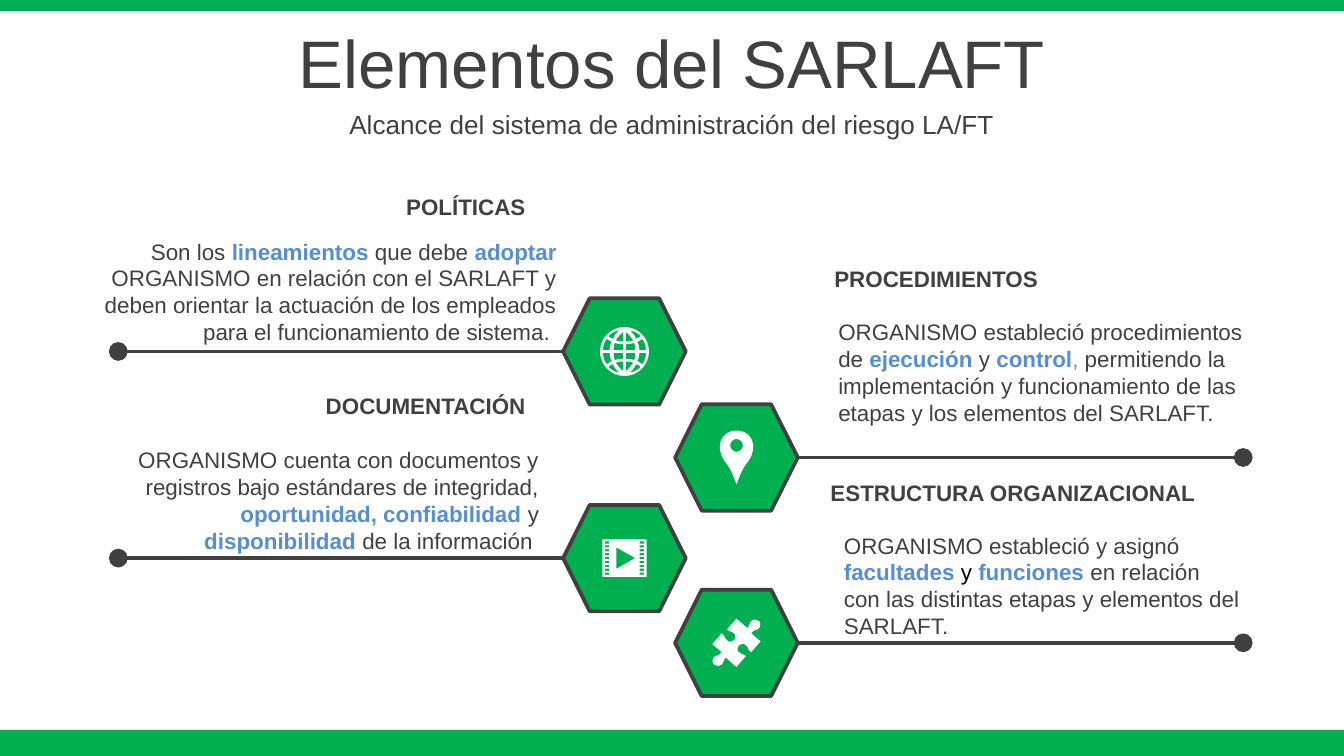
from lxml import etree
from pptx import Presentation, util as u
from pptx.dml.color import RGBColor
from pptx.enum import shapes as kinds, text
from pptx.oxml.ns import qn

Pt = u.Pt
THEME = {
    "font": "Arial", "title": 36, "subtitle": 14, "body": 12, "outline": 2,
    "green": "00B050", "dark": "404040", "blue": "558ED5", "black": "000000", "white": "FFFFFF",
}
# run style: colour, bold
STYLES = {
    "plain": ("dark", False), "strong": ("dark", True), "key": ("blue", True),
    "tint": ("blue", False), "ink": ("black", False),
}
SLIDE_W, SLIDE_H = 720, 405
HEX_W, HEX_H = 65.7, 57
HEX_LEFT = {"left": 301.7, "right": 361.7}
LINE_END = {"left": 63.4, "right": 666}
ICON_UNIT = 0.72

BANDS = [(0, 5.8), (391, 14)]  # top, height
HEADERS = [
    ("Elementos del SARLAFT", "title", 10.1, 45.4),
    ("Alcance del sistema de administración del riesgo LA/FT", "subtitle", 55.4, 22.3),
]
# boxes: left, top, width
ELEMENTS = [
    {"side": "left", "hex_top": 159.8, "icon": "globe",
     "heading": "POLÍTICAS", "heading_box": (84.2, 100.1, 204.5), "body_box": (36.7, 123.8, 268.6),
     "body": [("Son los ", "plain"), ("lineamientos ", "key"), ("que debe ", "plain"),
              ("adoptar ", "key"),
              ("ORGANISMO en relación con el SARLAFT y deben orientar la actuación de los "
               "empleados para el funcionamiento de sistema. ", "plain")]},
    {"side": "right", "hex_top": 216.6, "icon": "pin",
     "heading": "PROCEDIMIENTOS", "heading_box": (439.9, 138.6, 204.5), "body_box": (442, 166.9, 234.7),
     "body": [("ORGANISMO estableció procedimientos de ", "plain"), ("ejecución", "key"),
              (" y ", "plain"), ("control", "key"), (", ", "tint"),
              ("permitiendo la implementación y funcionamiento de las etapas y los "
               "elementos del SARLAFT.", "plain")]},
    {"side": "left", "hex_top": 270.5, "icon": "film",
     "heading": "DOCUMENTACIÓN", "heading_box": (84.2, 206.8, 204.5), "body_box": (48.2, 235.4, 247.7),
     "body": [("ORGANISMO cuenta con documentos y registros bajo estándares de integridad, ", "plain"),
              ("oportunidad, confiabilidad", "key"), (" y ", "plain"),
              ("disponibilidad ", "key"), ("de la información ", "plain")]},
    {"side": "right", "hex_top": 315.9, "icon": "puzzle",
     "heading": "ESTRUCTURA ORGANIZACIONAL", "heading_box": (437.8, 253, 226.8),
     "body_box": (445, 281.3, 227.5),
     "body": [("ORGANISMO estableció y asignó ", "plain"), ("facultades ", "key"), ("y ", "ink"),
              ("funciones ", "key"),
              ("en relación con las distintas etapas y elementos del SARLAFT.", "plain")]},
]

# Icon outlines, measured from the icon centre: pairs are corners, sixes are Bezier curves.
GLOBE_QUARTER = [
    [(1, 14.5), (1, 7.5), (3, 7.5, 5, 7.5, 6.5, 8.5), (5, 10.5, 3, 13, 1, 14.5)],
    [(7, 6.5), (5, 5.5, 3, 5.5, 1, 5.5), (1, 1), (8, 1), (8, 3, 8, 5, 7, 6.5)],
    [(13, 9.5), (12, 8.5, 11, 8, 9.5, 7), (10.5, 5.5, 11, 3, 11, 1), (16, 1),
     (16, 4, 15, 7.5, 13, 9.5)],
    [(4, 15.5), (6, 14, 7.5, 12, 8.5, 9.5), (10, 10, 11, 10.5, 12, 11.5),
     (10, 13.5, 7, 15.5, 4, 15.5)],
]
PIN_BODY = [(0, -20), (3, -20, 6.5, -19, 9, -16.5), (14, -12, 13, -3, 9, 2.5),
            (4.5, 8, 3, 12, 0, 20), (-3, 12, -4.5, 8, -9, 2.5),
            (-13, -3, -14, -12, -9, -16.5), (-6.5, -19, -3, -20, 0, -20)]
PUZZLE_HALF = [(17, -16), (18, -15, 18, -13, 17, -11), (15, -9, 13, -10, 11, -7), (18, -1),
               (11, 7), (8, 5, 9, 3, 7, 2), (6, 0, 3, 1, 2, 2), (1, 3, 0, 6, 2, 7),
               (4, 9, 5, 8, 7, 10), (0, 18), (-8, 11), (-10, 13, -9, 14, -11, 16),
               (-13, 18, -15, 17, -17, 16)]


def scaled(outline, sx, sy):
    return [tuple(v * (sy if i % 2 else sx) for i, v in enumerate(part)) for part in outline]


def circle(cx, cy, r):
    k = 0.55 * r
    return [(cx + r, cy), (cx + r, cy + k, cx + k, cy + r, cx, cy + r),
            (cx - k, cy + r, cx - r, cy + k, cx - r, cy),
            (cx - r, cy - k, cx - k, cy - r, cx, cy - r),
            (cx + k, cy - r, cx + r, cy - k, cx + r, cy)]


def box(x, y, w, h):
    return [(x, y), (x + w, y), (x + w, y + h), (x, y + h)]


ICONS = {
    "globe": [circle(0, 0, 18.2)] + [scaled(hole, sx, sy) for hole in GLOBE_QUARTER
                                     for sx in (1, -1) for sy in (1, -1)],
    "pin": [PIN_BODY, circle(0, -9, 4.7)],
    "film": [box(-16.5, -14, 33, 28), [(-6, -8), (-6, 8), (8, 0)]]
            + [box(x, -12.4 + 2.9 * row, 3.3, 1.6) for x in (-14.6, 11.3) for row in range(9)],
    "puzzle": [PUZZLE_HALF + scaled(PUZZLE_HALF, -1, -1)[1:]],
}


def flatten(outline, steps=8):
    """Turn corners and curves into a list of points."""
    points = []
    for part in outline:
        if len(part) == 2:
            points.append(part)
            continue
        start, (ax, ay, bx, by, ex, ey) = points[-1], part
        for t in (n / steps for n in range(1, steps + 1)):
            weights = ((1 - t) ** 3, 3 * t * (1 - t) ** 2, 3 * t * t * (1 - t), t ** 3)
            points.append(tuple(sum(w * v for w, v in zip(weights, axis))
                                for axis in ((start[0], ax, bx, ex), (start[1], ay, by, ey))))
    return points


def color(name):
    return RGBColor.from_string(THEME[name])


def paint(shape, fill, line=None):
    shape.shadow.inherit = False
    shape.fill.solid()
    shape.fill.fore_color.rgb = color(fill)
    if line:
        shape.line.color.rgb = color(line)
        shape.line.width = Pt(THEME["outline"])
    else:
        shape.line.fill.background()


def add_text(slide, bounds, runs, size, align, anchor=text.MSO_ANCHOR.TOP):
    frame = slide.shapes.add_textbox(*map(Pt, bounds)).text_frame
    frame.word_wrap = True
    frame.vertical_anchor = anchor
    paragraph = frame.paragraphs[0]
    paragraph.alignment = align
    for words, style in runs:
        run = paragraph.add_run()
        run.text = words
        tone, run.font.bold = STYLES[style]
        run.font.name, run.font.size = THEME["font"], Pt(THEME[size])
        run.font.color.rgb = color(tone)


def add_dotted_line(slide, x1, x2, y):
    """Draw a level line that ends in a large dot at x2."""
    line = slide.shapes.add_connector(kinds.MSO_CONNECTOR.STRAIGHT, Pt(x1), Pt(y), Pt(x2), Pt(y))
    line.line.color.rgb = color("dark")
    line.line.width = Pt(THEME["outline"])
    etree.SubElement(line.line._get_or_add_ln(), qn("a:tailEnd"), type="oval", w="lg", len="lg")
    etree.SubElement(line._element.spPr, qn("a:effectLst"))


def add_icon(slide, name, cx, cy):
    builder = None
    for outline in ICONS[name]:
        points = [(Pt(cx + ICON_UNIT * x), Pt(cy + ICON_UNIT * y)) for x, y in flatten(outline)]
        if builder is None:
            builder = slide.shapes.build_freeform(*points[0])
        else:
            builder.move_to(*points[0])
        builder.add_line_segments(points[1:], close=True)
    paint(builder.convert_to_shape(), "white")


def add_element(slide, element):
    side, left, top = element["side"], HEX_LEFT[element["side"]], element["hex_top"]
    middle = top + HEX_H / 2
    hexagon = slide.shapes.add_shape(kinds.MSO_SHAPE.HEXAGON, *map(Pt, (left, top, HEX_W, HEX_H)))
    paint(hexagon, "green", "dark")
    add_dotted_line(slide, left if side == "left" else left + HEX_W, LINE_END[side], middle)
    add_icon(slide, element["icon"], left + HEX_W / 2, middle)
    align = text.PP_ALIGN.RIGHT if side == "left" else text.PP_ALIGN.LEFT
    add_text(slide, (*element["body_box"], 65.4), element["body"], "body", align)
    add_text(slide, (*element["heading_box"], 21.8), [(element["heading"], "strong")], "body", align)


def main():
    deck = Presentation()
    deck.slide_width, deck.slide_height = Pt(SLIDE_W), Pt(SLIDE_H)
    slide = deck.slides.add_slide(deck.slide_layouts[6])
    for top, height in BANDS:
        band = slide.shapes.add_shape(kinds.MSO_SHAPE.RECTANGLE, 0, Pt(top), Pt(SLIDE_W), Pt(height))
        paint(band, "green")
    for element in ELEMENTS:
        add_element(slide, element)
    for words, size, top, height in HEADERS:
        add_text(slide, (0, top, SLIDE_W, height), [(words, "plain")], size,
                 text.PP_ALIGN.CENTER, text.MSO_ANCHOR.MIDDLE)
    deck.save("out.pptx")


if __name__ == "__main__":
    main()
